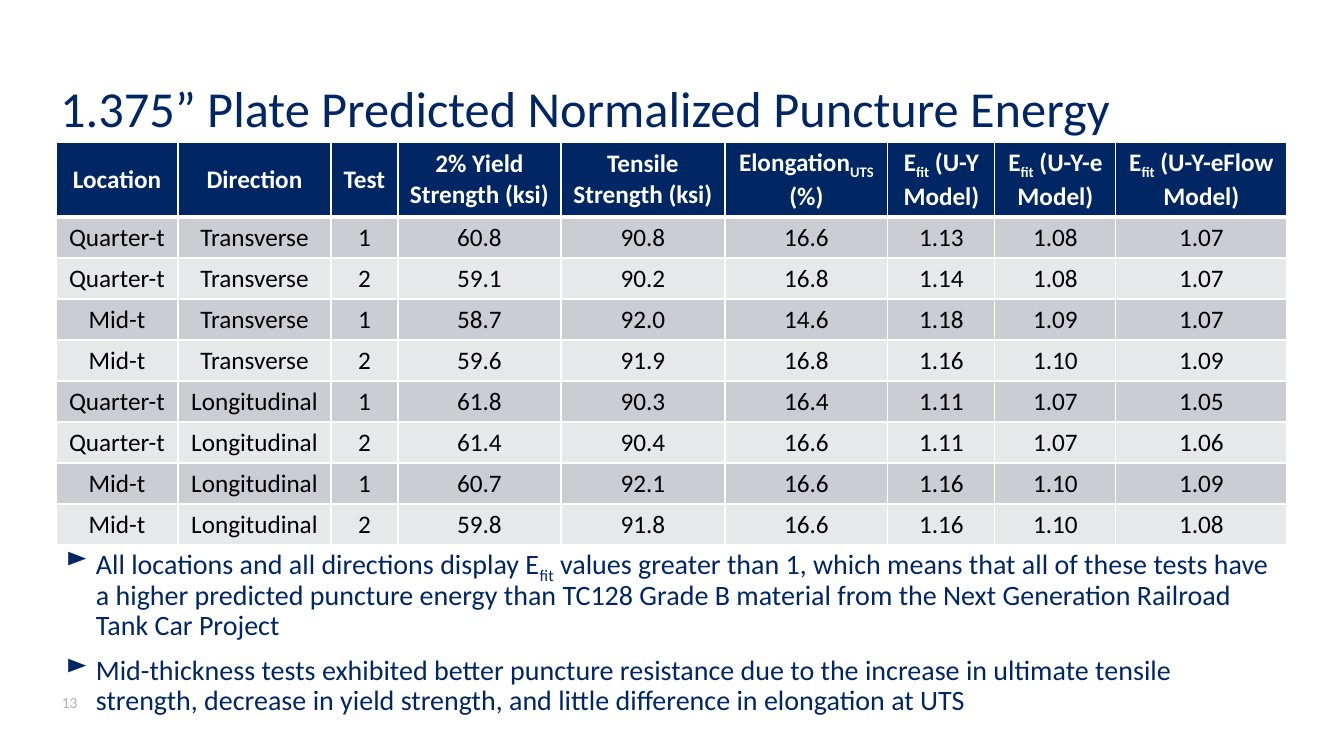
from lxml.etree import SubElement
from pptx import Presentation
from pptx.dml.color import RGBColor
from pptx.enum.text import MSO_ANCHOR, MSO_AUTO_SIZE, PP_ALIGN
from pptx.oxml.ns import qn
from pptx.util import Pt

PX = 9071.43
FONT = "Calibri"
COLOR = {"navy": "002664", "white": "FFFFFF", "black": "000000",
         "dark": "CCCDD3", "light": "E7E8EA", "gray": "B0B1AB"}

TITLE = "1.375” Plate Predicted Normalized Puncture Energy"
PAGE = "13"
# SUB
HEADS = ["Location", "Direction", "Test", "2% Yield Strength (ksi)",
         "Tensile Strength (ksi)", "Elongation|UTS| (%)",
         "E|fit| (U-Y Model)", "E|fit| (U-Y-e Model)",
         "E|fit| (U-Y-eFlow Model)"]
TESTS = [
    ("Quarter-t", "Transverse", "1", "60.8", "90.8", "16.6", "1.13", "1.08", "1.07"),
    ("Quarter-t", "Transverse", "2", "59.1", "90.2", "16.8", "1.14", "1.08", "1.07"),
    ("Mid-t", "Transverse", "1", "58.7", "92.0", "14.6", "1.18", "1.09", "1.07"),
    ("Mid-t", "Transverse", "2", "59.6", "91.9", "16.8", "1.16", "1.10", "1.09"),
    ("Quarter-t", "Longitudinal", "1", "61.8", "90.3", "16.4", "1.11", "1.07", "1.05"),
    ("Quarter-t", "Longitudinal", "2", "61.4", "90.4", "16.6", "1.11", "1.07", "1.06"),
    ("Mid-t", "Longitudinal", "1", "60.7", "92.1", "16.6", "1.16", "1.10", "1.09"),
    ("Mid-t", "Longitudinal", "2", "59.8", "91.8", "16.6", "1.16", "1.10", "1.08"),
]
NOTES = [
    "All locations and all directions display E|fit| values greater than 1, "
    "which means that all of these tests have a higher predicted puncture "
    "energy than TC128 Grade B material from the Next Generation Railroad "
    "Tank Car Project",
    "Mid-thickness tests exhibited better puncture resistance due to the "
    "increase in ultimate tensile strength, decrease in yield strength, and "
    "little difference in elongation at UTS",
]
WIDTHS = [122, 153, 67, 163, 164, 163, 107, 121, 171]
HEAD_H, ROW_H = 74, 41

LOOK = {
    "title": ({"size": Pt(36), "bold": False}, "navy"),
    "head": ({"size": Pt(18), "bold": True}, "white"),
    "cell": ({"size": Pt(18), "bold": False}, "black"),
    "note": ({"size": Pt(20)}, "navy"),
    "page": ({"size": Pt(11)}, "gray"),
}
FRAME = {"word_wrap": True, "auto_size": MSO_AUTO_SIZE.NONE}


def px(n):
    return round(n * PX)


def style(obj, vals):
    for key, val in vals.items():
        setattr(obj, key, val)


def write(para, text, look):
    vals, color = LOOK[look]
    for i, part in enumerate(text.split("|")):
        run = para.add_run()
        run.text = part
        style(run.font, {"name": FONT, **vals})
        run.font.color.rgb = RGBColor.from_string(COLOR[color])
        if i % 2:
            run._r.get_or_add_rPr().set("baseline", "-25000")


def tint(node, color):
    SubElement(node, qn("a:srgbClr")).set("val", COLOR[color])


def edge(cell, sides):
    props = cell._tc.get_or_add_tcPr()
    for side, width in sides.items():
        line = SubElement(props, qn(f"a:ln{side}"))
        line.set("w", str(Pt(width)))
        tint(SubElement(line, qn("a:solidFill")), "white")


def bullet(para):
    props = para._p.get_or_add_pPr()
    props.set("marL", str(px(30)))
    props.set("indent", str(px(-30)))
    tint(SubElement(props, qn("a:buClr")), "navy")
    SubElement(props, qn("a:buChar")).set("char", "►")


def add_box(slide, left, top, width, height, anchor):
    box = slide.shapes.add_textbox(*map(px, (left, top, width, height)))
    style(box.text_frame, {**FRAME, "vertical_anchor": anchor})
    return box.text_frame


def add_title(slide):
    title = slide.shapes.title
    style(title, {"left": px(50), "top": px(35), "width": px(1226), "height": px(107)})
    style(title.text_frame, {**FRAME, "vertical_anchor": MSO_ANCHOR.BOTTOM})
    para = title.text_frame.paragraphs[0]
    style(para, {"alignment": PP_ALIGN.LEFT, "line_spacing": 0.8})
    write(para, TITLE, "title")


def add_notes(slide):
    frame = add_box(slide, 56, 542, 1232, 175, MSO_ANCHOR.TOP)
    for i, note in enumerate(NOTES):
        para = frame.add_paragraph() if i else frame.paragraphs[0]
        style(para, {"line_spacing": 0.9, "space_before": Pt(10 if i else 0)})
        bullet(para)
        write(para, note, "note")


def add_grid(slide):
    rows = [HEADS, *TESTS]
    high = HEAD_H + ROW_H * len(TESTS)
    grid = slide.shapes.add_table(len(rows), len(HEADS), px(56), px(142),
                                  px(sum(WIDTHS)), px(high)).table
    for col, width in zip(grid.columns, WIDTHS):
        col.width = px(width)
    for r, row in enumerate(rows):
        grid.rows[r].height = px(ROW_H if r else HEAD_H)
        sides = {"L": 1, "R": 1, "T": 3 if r == 1 else 1, "B": 1 if r else 3}
        if r == len(TESTS):
            del sides["B"]
        fill = ("light", "dark")[r % 2] if r else "navy"
        for c, text in enumerate(row):
            cell = grid.cell(r, c)
            cell.vertical_anchor = MSO_ANCHOR.MIDDLE
            edge(cell, sides)
            cell.fill.solid()
            cell.fill.fore_color.rgb = RGBColor.from_string(COLOR[fill])
            para = cell.text_frame.paragraphs[0]
            para.alignment = PP_ALIGN.CENTER
            write(para, text, "cell" if r else "head")


def main():
    deck = Presentation()
    style(deck, {"slide_width": px(1344), "slide_height": px(756)})
    slide = deck.slides.add_slide(deck.slide_layouts[5])
    add_title(slide)
    add_notes(slide)
    page = add_box(slide, 52, 687, 60, 30, MSO_ANCHOR.MIDDLE)
    write(page.paragraphs[0], PAGE, "page")
    add_grid(slide)
    deck.save("out.pptx")


if __name__ == "__main__":
    main()
